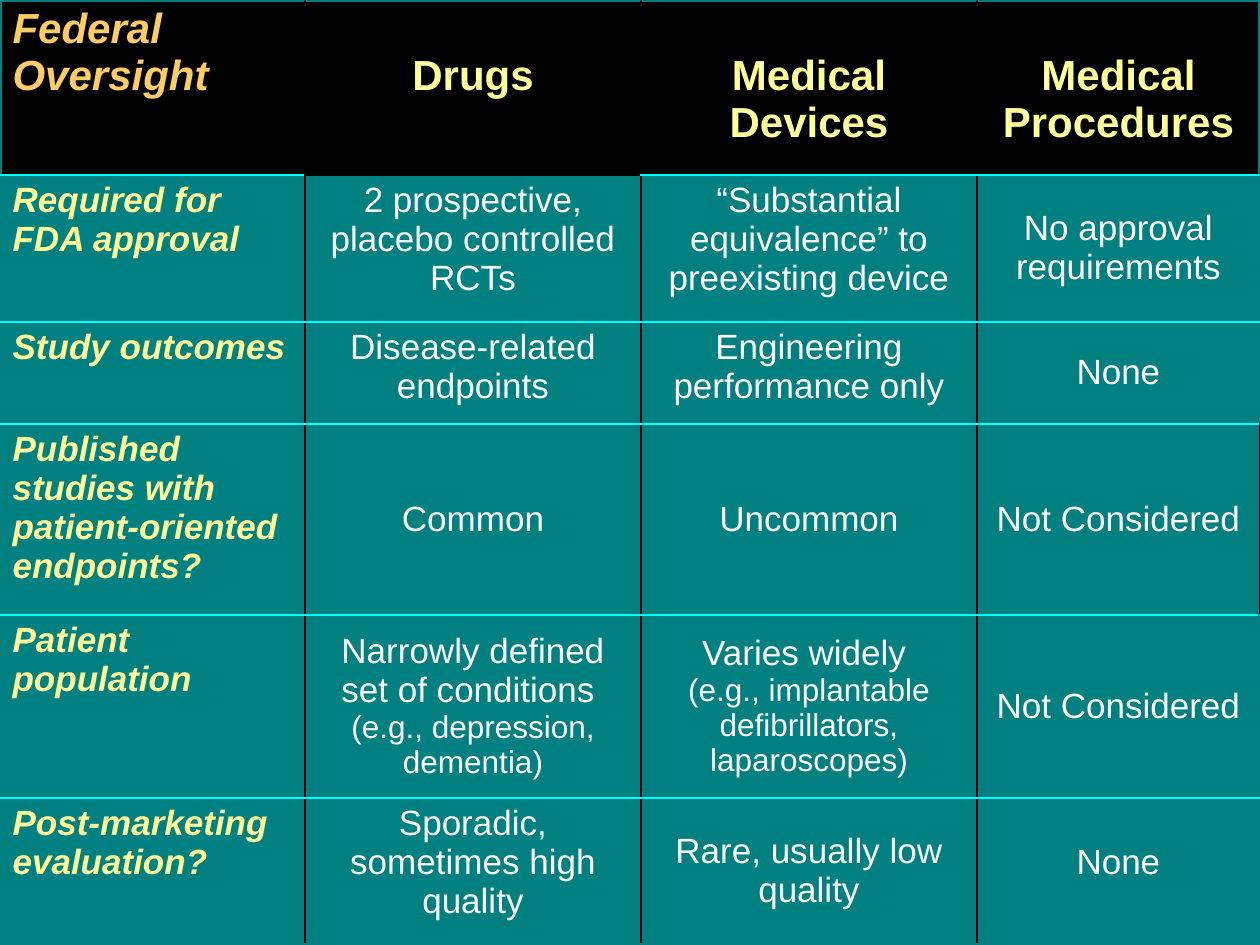
from lxml import etree
from pptx import Presentation
from pptx import util as u
from pptx.dml.color import RGBColor
from pptx.enum import text
from pptx.oxml import ns

EMU_PER_PX = 914400 / 126
FONT = "Arial"
BLACK = RGBColor(0x00, 0x00, 0x00)
WHITE = RGBColor(0xFF, 0xFF, 0xFF)
TEAL = RGBColor(0x00, 0x80, 0x80)
CYAN = RGBColor(0x00, 0xFF, 0xFF)
YELLOW = RGBColor(0xFF, 0xFF, 0x99)
ORANGE = RGBColor(0xFF, 0xCC, 0x66)

COLUMN_WIDTHS = [305, 336, 336, 283]
ROW_HEIGHTS = [175, 147, 102, 191, 183, 147]

# A cell is a list of paragraphs; paragraphs after the first are small print
ROWS = [
    [["Federal Oversight"], ["Drugs"], ["Medical Devices"], ["Medical Procedures"]],
    [["Required for FDA approval"],
     ["2 prospective, placebo controlled RCTs"],
     ["“Substantial equivalence” to preexisting device"],
     ["No approval requirements"]],
    [["Study outcomes"], ["Disease-related endpoints"],
     ["Engineering performance only"], ["None"]],
    [["Published studies with patient-oriented endpoints?"],
     ["Common"], ["Uncommon"], ["Not Considered"]],
    [["Patient population"],
     ["Narrowly defined set of conditions ", "(e.g., depression, dementia)"],
     ["Varies widely ", "(e.g., implantable defibrillators, laparoscopes)"],
     ["Not Considered"]],
    [["Post-marketing evaluation?"], ["Sporadic, sometimes high quality"],
     ["Rare, usually low quality"], ["None"]],
]
LAST_ROW = len(ROWS) - 1
LAST_COLUMN = len(COLUMN_WIDTHS) - 1

# Body answers set at the top; the others are centred vertically
TOP_ANSWERS = {(1, 1), (1, 2), (2, 1), (2, 2), (5, 1), (5, 3)}
# Top margins of cells whose text starts one line down
HEADER_MARGIN = 53
LAST_ANSWER_MARGIN = 45


def px(length):
    return u.Emu(round(length * EMU_PER_PX))


def write_text(cell, paragraphs, *, size, color, bold=False, italic=False,
               align=text.PP_ALIGN.LEFT, anchor=text.MSO_ANCHOR.TOP, top=6):
    cell.vertical_anchor = anchor
    cell.margin_top = px(top)
    frame = cell.text_frame
    for index, words in enumerate(paragraphs):
        paragraph = frame.add_paragraph() if index else frame.paragraphs[0]
        paragraph.alignment = align
        run = paragraph.add_run()
        run.text = words
        run.font.name = FONT
        run.font.size = u.Pt(size - 2 if index else size)
        run.font.color.rgb = color
        run.font.bold = bold
        run.font.italic = italic


def add_border(cell, side, color, width):
    properties = cell._tc.get_or_add_tcPr()
    line = etree.SubElement(properties, ns.qn(f"a:ln{side}"), w=str(u.Pt(width)))
    fill = etree.SubElement(line, ns.qn("a:solidFill"))
    etree.SubElement(fill, ns.qn("a:srgbClr"), val=str(color))


def draw_borders(cell, row, column):
    outer, vertical, horizontal = (TEAL, 2), (BLACK, 1), (CYAN, 1)
    # The rule below the Drugs heading is black, and one right edge is too
    top = vertical if (row, column) == (1, 1) else horizontal
    bottom = vertical if (row, column) == (0, 1) else horizontal
    at_right_edge = column == LAST_COLUMN and row != 3
    add_border(cell, "L", *(outer if column == 0 else vertical))
    add_border(cell, "R", *(outer if at_right_edge else vertical))
    add_border(cell, "T", *(outer if row == 0 else top))
    add_border(cell, "B", *(outer if row == LAST_ROW else bottom))


def text_format(row, column):
    if column == 0:
        return dict(size=20 if row else 24, color=YELLOW if row else ORANGE,
                    bold=True, italic=True)
    if row == 0:
        return dict(size=24, color=YELLOW, bold=True,
                    align=text.PP_ALIGN.CENTER, top=HEADER_MARGIN)
    at_top = (row, column) in TOP_ANSWERS
    is_last = (row, column) == (LAST_ROW, LAST_COLUMN)
    return dict(size=20, color=WHITE, align=text.PP_ALIGN.CENTER,
                anchor=text.MSO_ANCHOR.TOP if at_top else text.MSO_ANCHOR.MIDDLE,
                top=LAST_ANSWER_MARGIN if is_last else 6)


def add_oversight_table(slide):
    table = slide.shapes.add_table(
        len(ROWS), len(COLUMN_WIDTHS), 0, 0,
        px(sum(COLUMN_WIDTHS)), px(sum(ROW_HEIGHTS))).table
    table.first_row = False
    table.horz_banding = False
    for column, width in zip(table.columns, COLUMN_WIDTHS):
        column.width = px(width)
    for row, height in zip(table.rows, ROW_HEIGHTS):
        row.height = px(height)

    for row, contents in enumerate(ROWS):
        for column, paragraphs in enumerate(contents):
            cell = table.cell(row, column)
            write_text(cell, paragraphs, **text_format(row, column))
            # Borders come before the fill in the cell properties
            draw_borders(cell, row, column)
            cell.fill.solid()
            cell.fill.fore_color.rgb = TEAL if row else BLACK


def main():
    presentation = Presentation()
    presentation.slide_width = px(1260)
    presentation.slide_height = px(945)
    slide = presentation.slides.add_slide(presentation.slide_layouts[6])
    add_oversight_table(slide)
    presentation.save("out.pptx")


if __name__ == "__main__":
    main()
